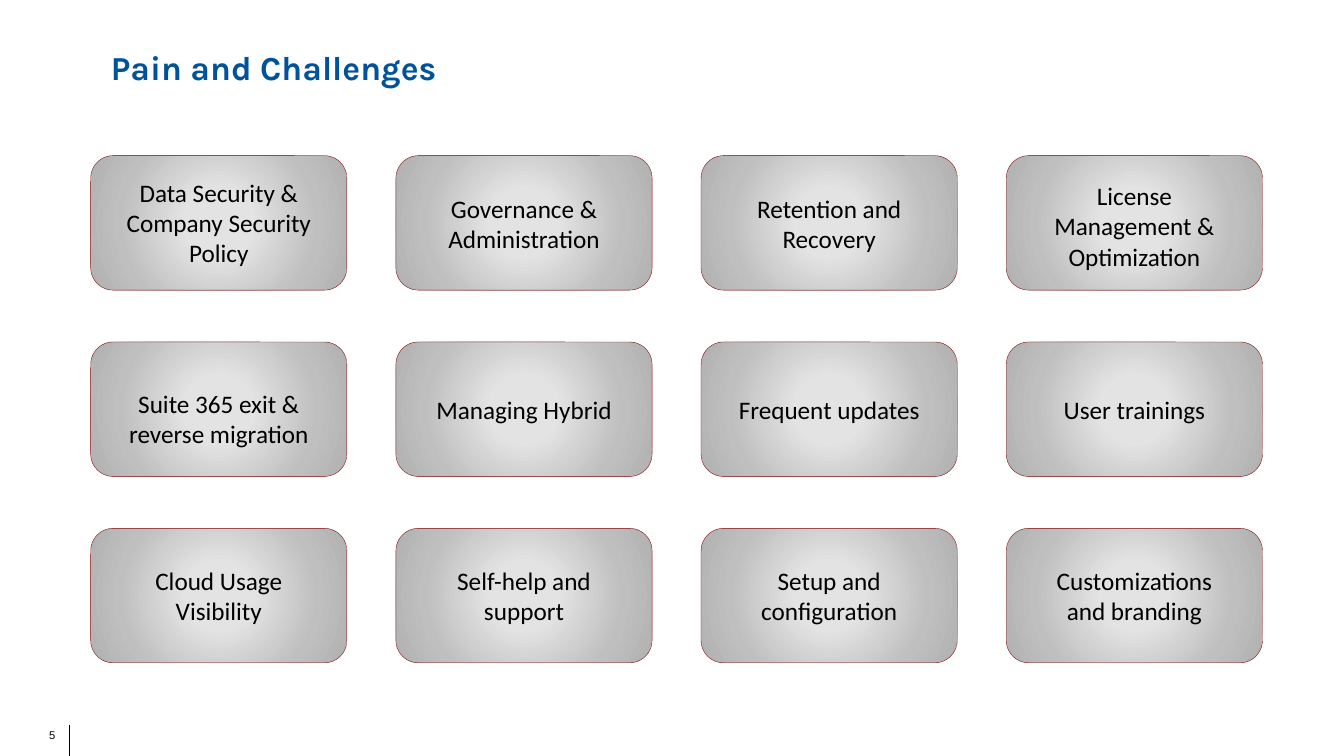
from lxml.etree import SubElement
from pptx import Presentation
from pptx.dml.color import RGBColor
from pptx.enum.shapes import MSO_CONNECTOR, MSO_SHAPE
from pptx.enum.text import MSO_ANCHOR, PP_ALIGN
from pptx.oxml import parse_xml
from pptx.oxml.ns import nsdecls, qn
from pptx.util import Pt

COLORS = {"title": "00529B", "text": "000000", "border": "850909",
          "light": "E3E3E3", "mid": "BFBFBF", "dark": "B2B2B2"}
STOPS = [(0, "light"), (23, "light"), (69, "mid"), (97, "dark")]

LEFT, TOP = 64.8, 111.2
CARD_W, CARD_H = 183, 96
STEP_X, STEP_Y = 218, 133.1
LABEL_W = 148
LABEL_H = {1: 29, 2: 51, 3: 72.7}
CHALLENGES = [
    [("Data Security & Company Security Policy", 3, 0), ("Governance & Administration", 2, 1),
     ("Retention and Recovery", 2, 1), ("License Management & Optimization", 3, 2.5)],
    [("Suite 365 exit & reverse migration", 2, 7), ("Managing Hybrid", 1, 0),
     ("Frequent updates", 1, 0), ("User trainings", 1, 0)],
    [("Cloud Usage Visibility", 2, 0), ("Self-help and support", 2, 0),
     ("Setup and configuration", 2, 0), ("Customizations and branding", 2, 0)],
]


class Deck:
    """Draws styled elements on the current slide, with lengths in points."""

    def __init__(self, prs):
        self.slide = prs.slides.add_slide(prs.slide_layouts[6])

    def color(self, name):
        return RGBColor.from_string(COLORS[name])

    def text(self, x, y, w, h, text, size, font="Calibri", color="text", bold=False,
             align=PP_ALIGN.CENTER, spacing=None, left=7.2, right=7.2):
        tf = self.slide.shapes.add_textbox(Pt(x), Pt(y), Pt(w), Pt(h)).text_frame
        tf.word_wrap = True
        tf.vertical_anchor = MSO_ANCHOR.TOP
        tf.margin_left, tf.margin_right = Pt(left), Pt(right)
        tf.text = text
        p = tf.paragraphs[0]
        p.alignment = align
        if spacing:
            p.line_spacing = spacing
        r = p.runs[0]
        r.font.size, r.font.name, r.font.bold = Pt(size), font, bold
        r.font.color.rgb = self.color(color)

    def card(self, x, y):
        sp = self.slide.shapes.add_shape(MSO_SHAPE.ROUNDED_RECTANGLE,
                                         Pt(x), Pt(y), Pt(CARD_W), Pt(CARD_H))
        sp.shadow.inherit = False
        sp.line.color.rgb = self.color("border")
        sp.line.width = Pt(0.25)
        sp.fill.background()
        stops = "".join(f'<a:gs pos="{pos * 1000}"><a:srgbClr val="{COLORS[name]}"/></a:gs>'
                        for pos, name in STOPS)
        gradient = parse_xml(
            f'<a:gradFill {nsdecls("a")} rotWithShape="1"><a:gsLst>{stops}</a:gsLst>'
            '<a:path path="circle"><a:fillToRect l="50000" t="50000" r="50000" b="50000"/>'
            '</a:path></a:gradFill>')
        props = sp._element.spPr
        props.replace(props.find(qn("a:noFill")), gradient)

    def line(self, x1, y1, x2, y2):
        cn = self.slide.shapes.add_connector(MSO_CONNECTOR.STRAIGHT, Pt(x1), Pt(y1), Pt(x2), Pt(y2))
        cn.line.color.rgb = self.color("text")
        cn.line.width = Pt(0.75)
        SubElement(cn._element.spPr, qn("a:effectLst"))


def main():
    prs = Presentation()
    prs.slide_width, prs.slide_height = Pt(960), Pt(540)
    deck = Deck(prs)
    deck.line(49.7, 517.7, 49.7, 540)
    deck.text(5, 517, 34.6, 16.6, "5", 8, font="Arial", align=PP_ALIGN.RIGHT, right=0)
    deck.text(0, 1.4, 826, 59, "Pain and Challenges", 24, font="Karla", color="title",
              bold=True, align=PP_ALIGN.LEFT, spacing=2, left=79.2)
    for row, labels in enumerate(CHALLENGES):
        for col, (label, lines, shift) in enumerate(labels):
            x, y = LEFT + col * STEP_X, TOP + row * STEP_Y
            h = LABEL_H[lines]
            deck.card(x, y)
            deck.text(x + (CARD_W - LABEL_W) / 2, y + (CARD_H - h) / 2 + shift,
                      LABEL_W, h, label, 18)
    prs.save("out.pptx")


if __name__ == "__main__":
    main()
